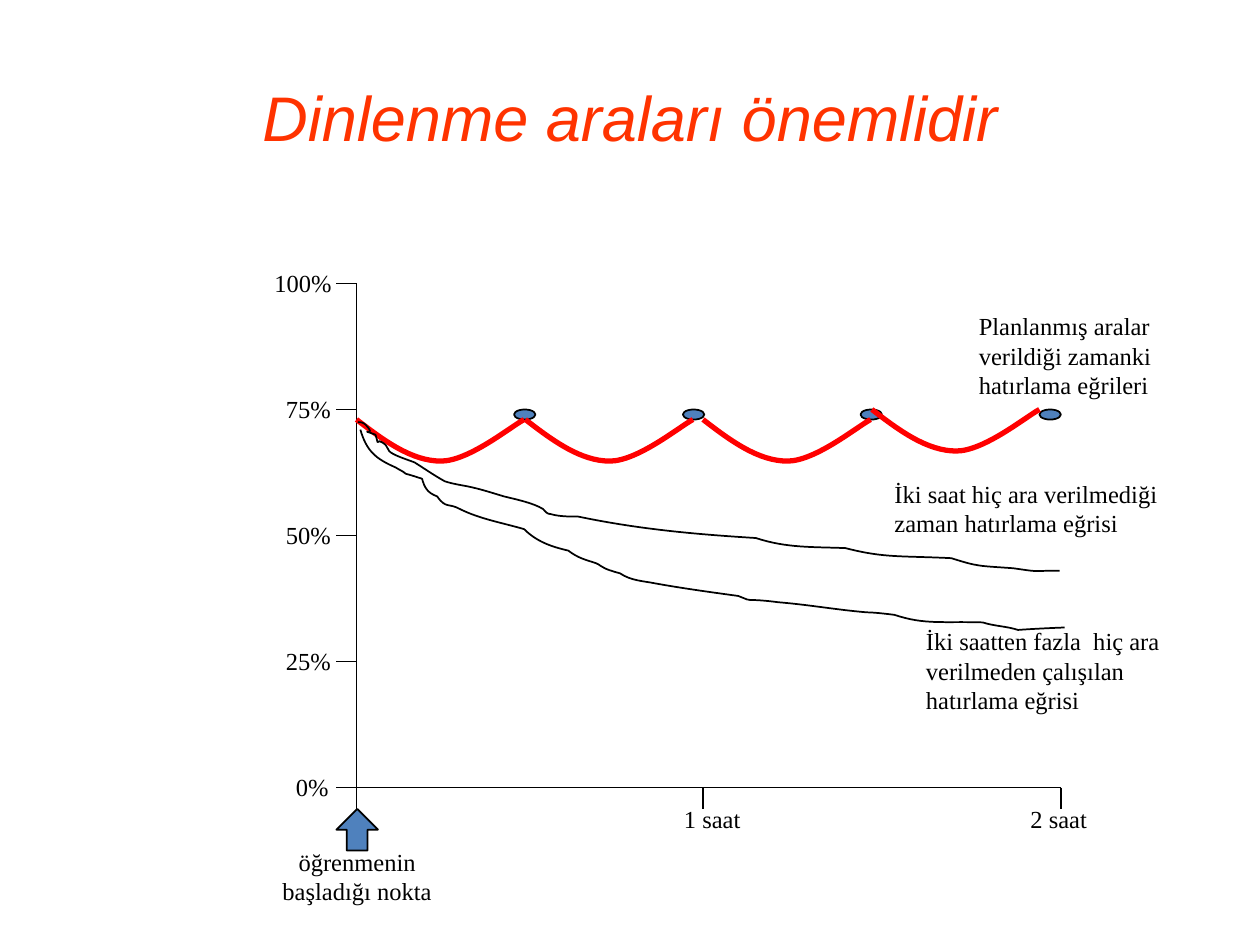
from lxml import etree
from pptx import Presentation
from pptx.dml.color import RGBColor
from pptx.enum.shapes import MSO_CONNECTOR, MSO_SHAPE
from pptx.enum.text import MSO_ANCHOR, MSO_AUTO_SIZE, PP_ALIGN
from pptx.oxml.ns import qn
from pptx.util import Inches, Pt

STRAIGHT = MSO_CONNECTOR.STRAIGHT
ELLIPSE, UP_ARROW = MSO_SHAPE.OVAL, MSO_SHAPE.UP_ARROW
LEFT, CENTER = PP_ALIGN.LEFT, PP_ALIGN.CENTER
MIDDLE = MSO_ANCHOR.MIDDLE
GROW = MSO_AUTO_SIZE.SHAPE_TO_FIT_TEXT

BLACK = RGBColor(0x00, 0x00, 0x00)
RED = RGBColor(0xFF, 0x00, 0x00)
ORANGE = RGBColor(0xFF, 0x33, 0x00)
BLUE = RGBColor(0x4F, 0x81, 0xBD)

AXIS_X, AXIS_Y, AXIS_TOP, AXIS_END = 2.83, 6.25, 2.25, 8.42
TICK_LEFT, TICK_BOTTOM = 2.67, 6.42

# Curves: a start point, then three points for each Bézier segment
BREAK_CURVE = [(0, 0), (0.22, 0.17), (0.44, 0.33), (0.67, 0.33),
               (0.89, 0.33), (1.22, 0.06), (1.33, 0)]
BREAK_STARTS = [(2.83, 3.33), (4.17, 3.33), (5.58, 3.33), (6.92, 3.25)]
BREAK_DOTS = [5.42, 4.08, 6.83, 8.25]
TWO_HOUR_CURVE = [
    (2.84, 3.35), (2.86, 3.35), (2.88, 3.35), (2.9, 3.37),
    (3.01, 3.48), (2.82, 3.39), (2.98, 3.45),
    (3.02, 3.58), (2.96, 3.45), (3.06, 3.53),
    (3.08, 3.55), (3.08, 3.58), (3.1, 3.59),
    (3.14, 3.62), (3.24, 3.65), (3.29, 3.67),
    (3.37, 3.72), (3.44, 3.77), (3.53, 3.82),
    (3.59, 3.84), (3.66, 3.85), (3.71, 3.86),
    (3.81, 3.88), (3.9, 3.91), (4, 3.94),
    (4.08, 3.96), (4.23, 3.99), (4.31, 4.04),
    (4.33, 4.06), (4.34, 4.08), (4.37, 4.08),
    (4.44, 4.1), (4.52, 4.1), (4.59, 4.1),
    (5.07, 4.2), (5.51, 4.24), (6, 4.27),
    (6.24, 4.35), (6.45, 4.34), (6.71, 4.35),
    (7.02, 4.43), (7.14, 4.41), (7.55, 4.43),
    (7.77, 4.5), (7.77, 4.49), (8.04, 4.51),
    (8.26, 4.54), (8.14, 4.53), (8.41, 4.53)]
LONGER_CURVE = [
    (2.86, 3.41), (2.91, 3.58), (2.98, 3.64), (3.14, 3.71),
    (3.17, 3.73), (3.2, 3.74), (3.22, 3.76),
    (3.26, 3.77), (3.35, 3.8), (3.35, 3.8),
    (3.37, 3.87), (3.39, 3.91), (3.47, 3.94),
    (3.54, 4.04), (3.56, 3.99), (3.65, 4.04),
    (3.81, 4.12), (3.99, 4.15), (4.16, 4.2),
    (4.26, 4.3), (4.38, 4.34), (4.51, 4.37),
    (4.59, 4.43), (4.64, 4.44), (4.73, 4.47),
    (4.76, 4.48), (4.77, 4.5), (4.8, 4.51),
    (4.84, 4.53), (4.92, 4.55), (4.92, 4.55),
    (5.01, 4.61), (5.1, 4.61), (5.2, 4.63),
    (5.42, 4.67), (5.64, 4.7), (5.86, 4.73),
    (6.01, 4.79), (5.86, 4.74), (6.18, 4.78),
    (6.42, 4.8), (6.64, 4.84), (6.88, 4.86),
    (6.95, 4.86), (7.1, 4.88), (7.1, 4.88),
    (7.34, 4.96), (7.48, 4.93), (7.8, 4.94),
    (7.89, 4.97), (7.99, 4.97), (8.08, 5),
    (8.2, 4.99), (8.45, 4.98), (8.45, 4.98)]


def write_text(frame, text, size=14, font="Times New Roman", color=BLACK,
               italic=False, align=LEFT):
    frame.word_wrap = True
    paragraph = frame.paragraphs[0]
    paragraph.alignment = align
    run = paragraph.add_run()
    run.text = text
    run.font.size = Pt(size)
    run.font.name = font
    run.font.italic = italic
    run.font.color.rgb = color


def add_label(slide, text, left, top, width, height=0.33, **text_format):
    label = slide.shapes.add_textbox(
        Inches(left), Inches(top), Inches(width), Inches(height))
    write_text(label.text_frame, text, **text_format)
    label.text_frame.auto_size = GROW


def add_line(slide, x1, y1, x2, y2):
    line = slide.shapes.add_connector(
        STRAIGHT, Inches(x1), Inches(y1), Inches(x2), Inches(y2))
    line.line.color.rgb = BLACK
    line.line.width = Pt(1)
    etree.SubElement(line._element.spPr, qn("a:effectLst"))


def add_marker(slide, kind, left, top, width, height):
    marker = slide.shapes.add_shape(
        kind, Inches(left), Inches(top), Inches(width), Inches(height))
    marker.shadow.inherit = False
    marker.fill.solid()
    marker.fill.fore_color.rgb = BLUE
    marker.line.color.rgb = BLACK
    marker.line.width = Pt(1)


def add_curve(slide, points, color, width):
    start, *rest = [(Inches(x), Inches(y)) for x, y in points]
    builder = slide.shapes.build_freeform(*start)
    builder.add_line_segments(rest, close=False)
    curve = builder.convert_to_shape()
    # Join each three line points into one Bézier segment
    segments = list(curve._element.iter(qn("a:lnTo")))
    for i in range(0, len(segments), 3):
        first, *others = segments[i:i + 3]
        bezier = etree.Element(qn("a:cubicBezTo"))
        first.addprevious(bezier)
        for segment in (first, *others):
            bezier.append(segment[0])
            segment.getparent().remove(segment)
    curve.shadow.inherit = False
    curve.fill.background()
    curve.line.color.rgb = color
    curve.line.width = Pt(width)


def add_title(slide, text):
    title = slide.shapes.title
    title.left, title.top = Inches(0.5), Inches(0.3)
    title.width, title.height = Inches(9), Inches(1.25)
    title.text_frame.vertical_anchor = MIDDLE
    write_text(title.text_frame, text, size=36, font="Arial", color=ORANGE,
               italic=True, align=CENTER)


def add_axes(slide):
    add_line(slide, AXIS_X, AXIS_TOP, AXIS_X, TICK_BOTTOM)
    add_line(slide, TICK_LEFT, AXIS_Y, AXIS_END, AXIS_Y)

    # Recall scale, one inch per 25%
    for step, (left, width) in enumerate(
            [(2.08, 0.67), (2.17, 0.67), (2.17, 0.67), (2.17, 0.67), (2.25, 0.5)]):
        y = AXIS_TOP + step
        if y < AXIS_Y:
            add_line(slide, AXIS_X, y, TICK_LEFT, y)
        add_label(slide, f"{100 - 25 * step}%", left, y - 0.17, width)

    # Time scale
    for text, x, left, width in [("1 saat", 5.58, 5.33, 0.83),
                                 ("2 saat", AXIS_END, 8.08, 0.67)]:
        add_line(slide, x, AXIS_Y, x, TICK_BOTTOM)
        add_label(slide, text, left, 6.33, width)


def main():
    prs = Presentation()
    prs.slide_width, prs.slide_height = Inches(10), Inches(7.5)
    slide = prs.slides.add_slide(prs.slide_layouts[5])

    add_title(slide, "Dinlenme araları önemlidir")
    add_axes(slide)

    # Starting point of learning
    add_marker(slide, UP_ARROW, TICK_LEFT, TICK_BOTTOM, 0.33, 0.33)
    add_label(slide, "öğrenmenin başladığı nokta", 1.92, 6.67, 1.83, 0.57,
              align=CENTER)

    # Recall with planned breaks
    for left in BREAK_DOTS:
        add_marker(slide, ELLIPSE, left, 3.25, 0.17, 0.08)
    for x, y in BREAK_STARTS:
        add_curve(slide, [(x + dx, y + dy) for dx, dy in BREAK_CURVE], RED, 3)
    add_label(slide, "Planlanmış aralar verildiği zamanki hatırlama eğrileri",
              7.67, 2.42, 1.67, 0.8)

    # Recall without breaks
    add_curve(slide, TWO_HOUR_CURVE, BLACK, 1)
    add_curve(slide, LONGER_CURVE, BLACK, 1)
    add_label(slide, "İki saat hiç ara verilmediği zaman hatırlama eğrisi",
              7, 3.75, 2.42, 0.57)
    add_label(slide, "İki saatten fazla  hiç ara verilmeden çalışılan hatırlama eğrisi",
              7.25, 4.92, 2.42, 0.8)

    prs.save("out.pptx")


if __name__ == "__main__":
    main()
